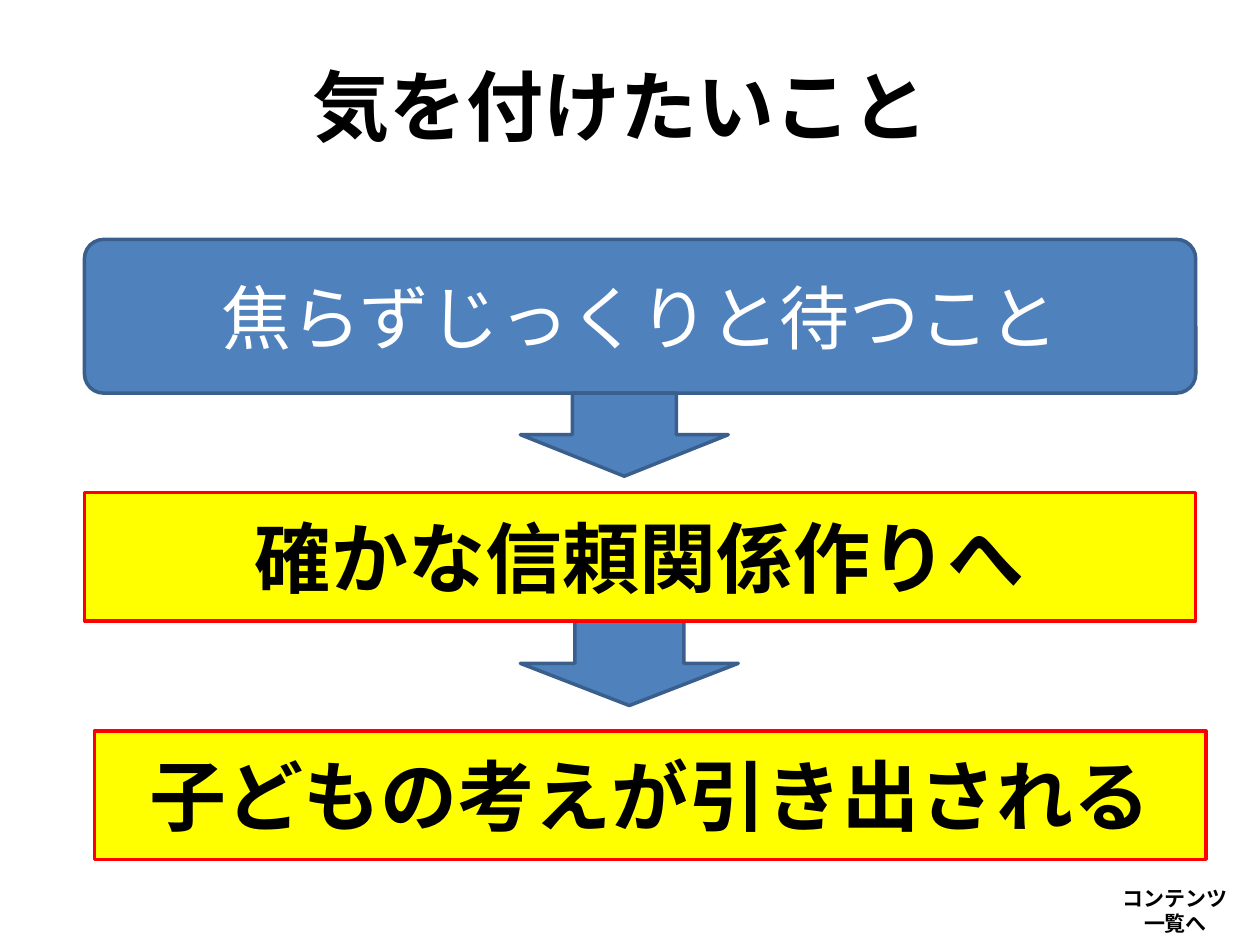
import pptx
import pptx.util
import pptx.dml.color
import pptx.enum.shapes
import pptx.enum.text
import pptx.oxml
import pptx.oxml.ns

Inches = pptx.util.Inches
Kind = pptx.enum.shapes.MSO_SHAPE
FONT = "Noto Sans CJK JP"
HUES = {"blue": "4F81BD", "navy": "3A5F8C", "gold": "FFFF00",
        "red": "FF0000", "black": "000000", "white": "FFFFFF"}

TITLE = "気を付けたいこと"
BLUE = {"fill": "blue", "line": "navy"}
GOLD = {"fill": "gold", "line": "red"}
BOLD = {"size": 44, "bold": True}

# Back to front: kind, place, paint, lines of text, text format
PARTS = [
    (Kind.ROUNDED_RECTANGLE, (0.67, 1.9, 8.82, 1.22), BLUE,
     ["焦らずじっくりと待つこと"], {"size": 40, "hue": "white"}),
    (Kind.DOWN_ARROW, (4.13, 3.12, 1.65, 0.66), BLUE, [], {}),
    (Kind.DOWN_ARROW, (4.13, 4.93, 1.73, 0.67), BLUE, [], {}),
    (Kind.RECTANGLE, (0.75, 5.8, 8.82, 1.02), GOLD,
     ["子どもの考えが引き出される"], BOLD),
    (Kind.RECTANGLE, (0.67, 3.91, 8.82, 1.02), GOLD,
     ["確かな信頼関係作りへ"], BOLD),
    (Kind.BEVEL, (8.66, 6.95, 1.34, 0.55), {},
     ["コンテンツ", "一覧へ"], {"size": 12, "bold": True}),
]


def tint(hue):
    return pptx.dml.color.RGBColor.from_string(HUES[hue])


def write(shape, lines, size=44, hue="black", bold=False):
    frame = shape.text_frame
    frame.word_wrap = True
    frame.vertical_anchor = pptx.enum.text.MSO_ANCHOR.MIDDLE
    for i, line in enumerate(lines):
        para = frame.add_paragraph() if i else frame.paragraphs[0]
        para.alignment = pptx.enum.text.PP_ALIGN.CENTER
        run = para.add_run()
        run.text = line
        font = run.font
        font.size, font.bold, font.name = pptx.util.Pt(size), bold, FONT
        font.color.rgb = tint(hue)
        # Japanese glyphs take the East Asian typeface
        east = pptx.oxml.parse_xml(
            f'<a:ea {pptx.oxml.ns.nsdecls("a")} typeface="{FONT}"/>')
        run.font._element.find(pptx.oxml.ns.qn("a:latin")).addnext(east)


def paint(shape, fill=None, line=None):
    shape.shadow.inherit = False
    if fill:
        shape.fill.solid()
        shape.fill.fore_color.rgb = tint(fill)
    else:
        shape.fill.background()
    if line:
        shape.line.color.rgb = tint(line)
        shape.line.width = pptx.util.Pt(2)
    else:
        shape.line.fill.background()


def main():
    deck = pptx.Presentation()
    deck.slide_width, deck.slide_height = Inches(10), Inches(7.5)
    slide = deck.slides.add_slide(deck.slide_layouts[5])

    # Title
    title = slide.shapes.title
    title.left, title.top = Inches(0.43), Inches(0.21)
    title.width, title.height = Inches(9), Inches(1.25)
    write(title, [TITLE], **BOLD)

    # Steps, arrows and contents button
    for kind, place, look, lines, form in PARTS:
        shape = slide.shapes.add_shape(kind, *map(Inches, place))
        if kind == Kind.ROUNDED_RECTANGLE:
            shape.adjustments[0] = 0.125
        paint(shape, **look)
        if lines:
            write(shape, lines, **form)

    deck.save("out.pptx")


if __name__ == "__main__":
    main()
